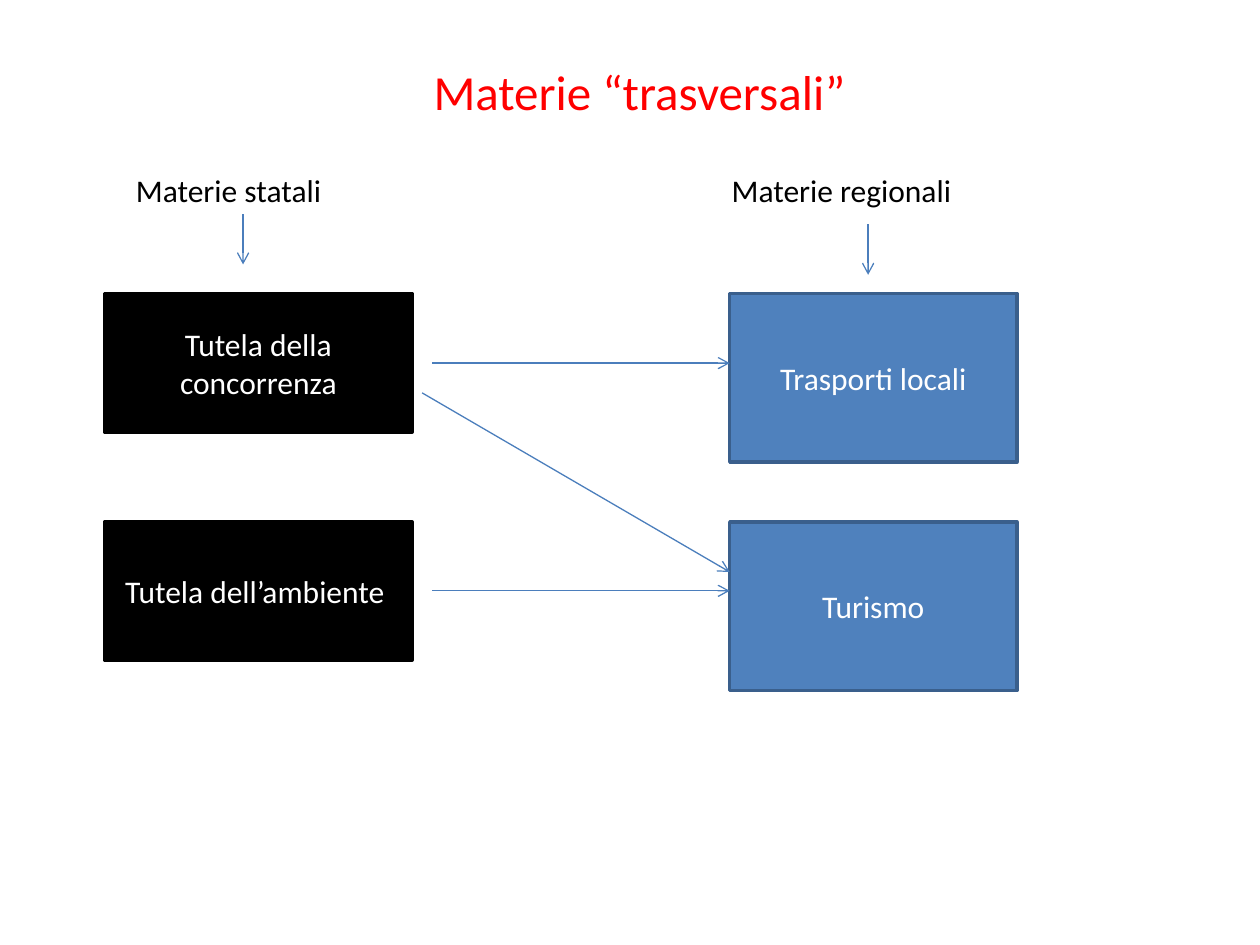
from dataclasses import dataclass

from lxml import etree
from pptx import Presentation
from pptx import util as u
from pptx.dml.color import RGBColor
from pptx.enum import shapes, text
from pptx.oxml import ns

RED = RGBColor(0xFF, 0x00, 0x00)
BLACK = RGBColor(0x00, 0x00, 0x00)
WHITE = RGBColor(0xFF, 0xFF, 0xFF)
BLUE = RGBColor(0x4F, 0x81, 0xBD)
DARK_BLUE = RGBColor(0x3A, 0x5F, 0x8C)
ARROW_BLUE = RGBColor(0x4B, 0x7E, 0xBC)

ROW_TOPS = (5.92, 10.52)


@dataclass(frozen=True)
class Column:
    heading: str
    heading_left: float
    left: float
    width: float
    height: float
    fill: RGBColor
    border: RGBColor
    subjects: tuple[str, str]


@dataclass(frozen=True)
class Arrow:
    start: tuple[float, float]
    end: tuple[float, float]


COLUMNS = (
    Column("Materie regionali", 14.5, 14.71, 5.79, 3.4, BLUE, DARK_BLUE,
           ("Trasporti locali", "Turismo")),
    Column("Materie statali", 2.49, 2.11, 6.2, 2.79, BLACK, BLACK,
           ("Tutela della concorrenza", "Tutela dell’ambiente ")),
)

ARROWS = (
    Arrow((17.5, 4.52), (17.5, 5.54)),
    Arrow((4.9, 4.32), (4.9, 5.33)),
    Arrow((8.71, 7.32), (14.71, 7.32)),
    Arrow((8.51, 7.92), (14.71, 11.53)),
    Arrow((8.71, 11.91), (14.71, 11.91)),
)


def write(frame, words: str, size: int, color: RGBColor, align, anchor) -> None:
    frame.text = words
    frame.word_wrap = True
    frame.vertical_anchor = anchor
    para = frame.paragraphs[0]
    para.alignment = align
    for span in para.runs:
        span.font.name = "Calibri"
        span.font.size = u.Pt(size)
        span.font.color.rgb = color


def add_title(page) -> None:
    title = page.shapes.title
    title.left, title.top = u.Cm(1.09), u.Cm(1.12)
    title.width, title.height = u.Cm(23.6), u.Cm(3.43)
    write(title.text_frame, "Materie “trasversali”", 28, RED,
          text.PP_ALIGN.CENTER, text.MSO_ANCHOR.TOP)


def add_column(page, column: Column) -> None:
    heading = page.shapes.add_textbox(
        u.Cm(column.heading_left), u.Cm(3.33), u.Cm(6.2), u.Cm(1.02))
    write(heading.text_frame, column.heading, 18, BLACK,
          text.PP_ALIGN.LEFT, text.MSO_ANCHOR.TOP)
    for top, subject in zip(ROW_TOPS, column.subjects):
        box = page.shapes.add_shape(
            shapes.MSO_SHAPE.RECTANGLE, u.Cm(column.left), u.Cm(top),
            u.Cm(column.width), u.Cm(column.height))
        box.shadow.inherit = False
        box.fill.solid()
        box.fill.fore_color.rgb = column.fill
        box.line.color.rgb = column.border
        box.line.width = u.Pt(2)
        write(box.text_frame, subject, 18, WHITE,
              text.PP_ALIGN.CENTER, text.MSO_ANCHOR.MIDDLE)


def add_arrow(page, arrow: Arrow) -> None:
    points = [u.Cm(value) for value in arrow.start + arrow.end]
    connector = page.shapes.add_connector(shapes.MSO_CONNECTOR.STRAIGHT, *points)
    connector.line.color.rgb = ARROW_BLUE
    connector.line.width = u.Pt(0.75)
    etree.SubElement(connector.get_or_add_ln(), ns.qn("a:tailEnd"), type="arrow")
    etree.SubElement(connector.element.spPr, ns.qn("a:effectLst"))


def main() -> None:
    deck = Presentation()
    deck.slide_width, deck.slide_height = u.Cm(25.4), u.Cm(19.05)
    page = deck.slides.add_slide(deck.slide_layouts.get_by_name("Title Only"))
    add_title(page)
    for column in COLUMNS:
        add_column(page, column)
    for arrow in ARROWS:
        add_arrow(page, arrow)
    deck.save("out.pptx")


if __name__ == "__main__":
    main()
